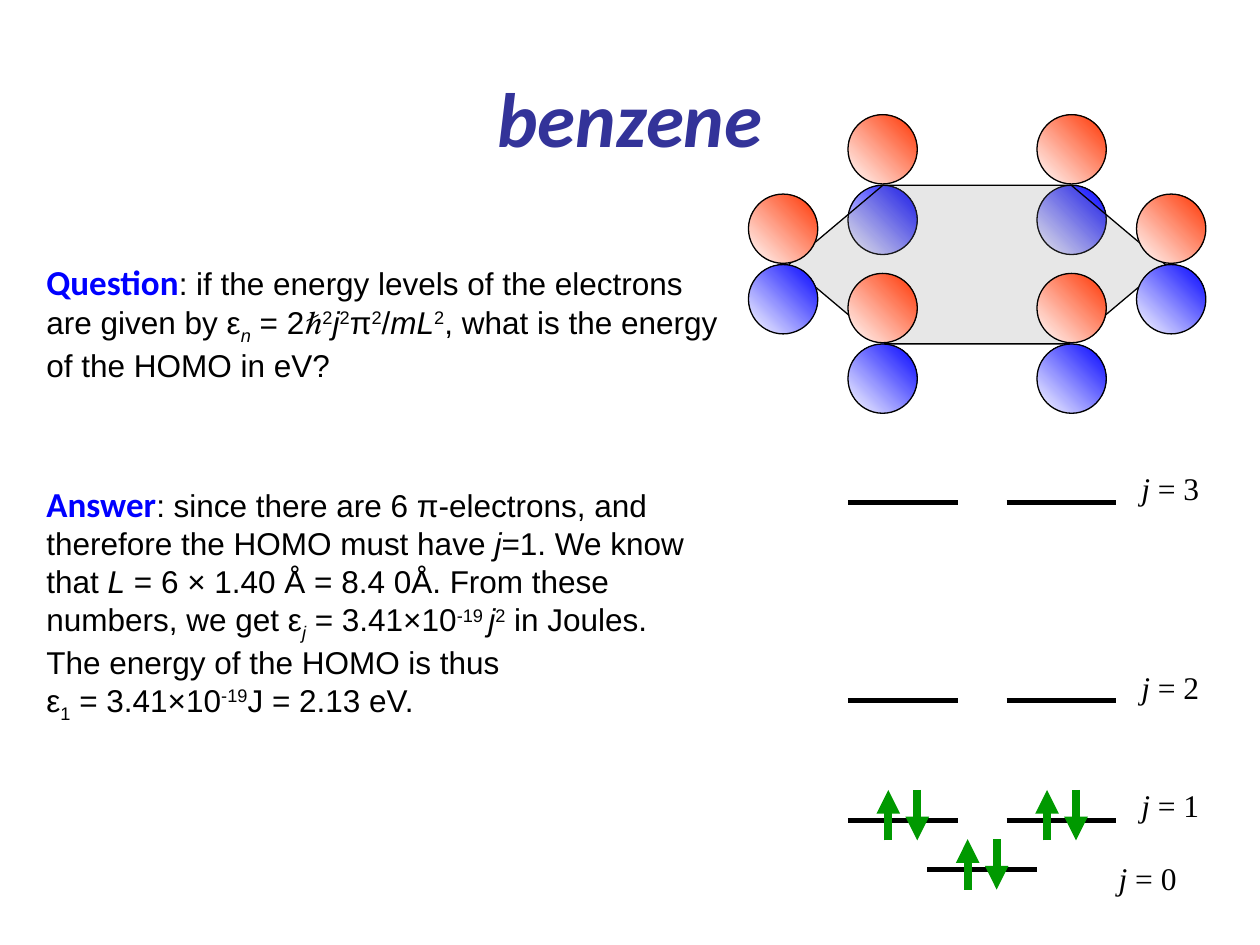
"""Build the benzene slide: p orbitals, energy levels and the HOMO question."""
from lxml import etree
from pptx import Presentation
from pptx import util as u
from pptx.dml.color import RGBColor
from pptx.enum import shapes, text
from pptx.oxml.ns import qn

WIDTH, HEIGHT = 10, 7.5
BLACK, BLUE, RED, GREEN, GREY, NAVY = "000000", "0000FF", "FF3300", "009900", "808080", "333399"
BASELINES = {"sub": "-25000", "sup": "30000"}

TITLE = [[("benzene", "bold italic")]]
QUESTION = [[
    ("Question", "lead"), (": if the energy levels of the electrons are given by ε", ""),
    ("n", "italic sub"), (" = 2ℏ", ""), ("2", "sup"), ("j", "italic"), ("2", "sup"),
    ("π", ""), ("2", "sup"), ("/", ""), ("mL", "italic"), ("2", "sup"),
    (", what is the energy of the HOMO in eV?", ""),
]]
ANSWER = [
    [
        ("Answer", "lead"),
        (": since there are 6 π-electrons, and therefore the HOMO must have ", ""),
        ("j", "italic"), ("=1. We know that ", ""), ("L", "italic"),
        (" = 6 × 1.40 Å = 8.4 0Å. From these numbers, we get ε", ""),
        ("j", "italic sub"), (" = 3.41×10", ""), ("-19 ", "sup"), ("j", "italic"),
        ("2", "sup"), (" in Joules. The energy of the HOMO is thus", ""),
    ],
    [("ε", ""), ("1", "sub"), (" = 3.41×10", ""), ("-19", "sup"), ("J = 2.13 eV.", "")],
]

ATOM_COLUMNS = (5.94, 6.73, 8.23, 9.02)
ATOM_TOP, ATOM_ROW, LOBE, LOBE_STEP = 0.91, 0.63, 0.55, 0.56
BACK_ATOMS = [(1, 0), (2, 0)]
FRONT_ATOMS = [(0, 1), (1, 2), (2, 2), (3, 1)]

LEVEL_LENGTH, ARROW_LENGTH, ARROW_OFFSETS = 0.87, 0.4, (0.32, 0.55)
PAIR = (6.73, 7.99)
LEVELS = [
    {"j": 0, "y": 6.9, "starts": (7.36,), "filled": True, "label": (8.78, 6.77)},
    {"j": 1, "y": 6.51, "starts": PAIR, "filled": True, "label": (8.96, 6.19)},
    {"j": 2, "y": 5.56, "starts": PAIR, "filled": False, "label": (8.96, 5.25)},
    {"j": 3, "y": 3.99, "starts": PAIR, "filled": False, "label": (8.96, 3.67)},
]


def color(value):
    return RGBColor.from_string(value)


def add_text(slide, paragraphs, box, font="Arial", size=18, ink=BLACK, wrap=True,
             align=text.PP_ALIGN.LEFT, anchor=text.MSO_ANCHOR.TOP):
    frame = slide.shapes.add_textbox(*map(u.Inches, box)).text_frame
    frame.word_wrap = wrap
    frame.vertical_anchor = anchor
    for index, runs in enumerate(paragraphs):
        paragraph = frame.add_paragraph() if index else frame.paragraphs[0]
        paragraph.alignment = align
        for words, style in runs:
            styles = style.split()
            lead = "lead" in styles
            run = paragraph.add_run()
            run.text = words
            run.font.name = "Calibri" if lead else font
            run.font.size = u.Pt(20 if lead else size)
            run.font.bold = lead or "bold" in styles
            run.font.italic = "italic" in styles
            run.font.color.rgb = color(BLUE if lead else ink)
            for name in BASELINES.keys() & set(styles):
                run._r.get_or_add_rPr().set("baseline", BASELINES[name])


def add_outlined(slide, kind, box):
    shape = slide.shapes.add_shape(kind, *map(u.Inches, box))
    shape.shadow.inherit = False
    shape.line.color.rgb = color(BLACK)
    shape.line.width = u.Pt(0.75)
    return shape


def add_orbital(slide, column, row):
    top = ATOM_TOP + row * ATOM_ROW
    for index, tint in enumerate((RED, BLUE)):
        box = (ATOM_COLUMNS[column], top + index * LOBE_STEP, LOBE, LOBE)
        lobe = add_outlined(slide, shapes.MSO_SHAPE.OVAL, box)
        lobe.fill.gradient()
        lobe.fill.gradient_angle = 45
        for stop, value in zip(lobe.fill.gradient_stops, ("FFFFFF", tint)):
            stop.color.rgb = color(value)


def add_ring(slide):
    ring = add_outlined(slide, shapes.MSO_SHAPE.HEXAGON, (6.26, 1.47, 2.99, 1.26))
    ring.adjustments[0] = 0.594
    ring.fill.solid()
    ring.fill.fore_color.rgb = color(GREY)
    fill = ring._element.spPr.find(qn("a:solidFill"))
    etree.SubElement(fill[0], qn("a:alpha"), val="19000")


def add_line(slide, start, end, ink, width, arrow=False):
    line = slide.shapes.add_connector(
        shapes.MSO_CONNECTOR.STRAIGHT, *map(u.Inches, (*start, *end)))
    line.line.color.rgb = color(ink)
    line.line.width = u.Pt(width)
    if arrow:
        etree.SubElement(line.line._get_or_add_ln(), qn("a:tailEnd"), type="triangle")
    etree.SubElement(line._element.spPr, qn("a:effectLst"))


def add_electrons(slide, left, level_y):
    top = level_y - 0.24
    bottom = top + ARROW_LENGTH
    for offset, (start, end) in zip(ARROW_OFFSETS, ((bottom, top), (top, bottom))):
        x = left + offset
        add_line(slide, (x, start), (x, end), GREEN, 4.5, arrow=True)


def main():
    presentation = Presentation()
    presentation.slide_width, presentation.slide_height = u.Inches(WIDTH), u.Inches(HEIGHT)
    slide = presentation.slides.add_slide(presentation.slide_layouts[6])

    add_text(slide, TITLE, (0.5, 0.3, 9, 1.25), font="Calibri", size=44, ink=NAVY,
             align=text.PP_ALIGN.CENTER, anchor=text.MSO_ANCHOR.MIDDLE)
    add_text(slide, QUESTION, (0.27, 2.02, 5.59, 1.03))
    add_text(slide, ANSWER, (0.27, 3.78, 5.36, 1.94))

    for atom in BACK_ATOMS:
        add_orbital(slide, *atom)
    add_ring(slide)
    for atom in FRONT_ATOMS:
        add_orbital(slide, *atom)

    for level in LEVELS:
        for left in level["starts"]:
            add_line(slide, (left, level["y"]), (left + LEVEL_LENGTH, level["y"]), BLACK, 3)
        label = [[("j", "italic"), (f" = {level['j']}", "")]]
        add_text(slide, label, (*level["label"], 0.66, 0.4), font="Times New Roman", wrap=False)
    for level in LEVELS:
        if level["filled"]:
            for left in level["starts"]:
                add_electrons(slide, left, level["y"])

    presentation.save("out.pptx")


if __name__ == "__main__":
    main()
